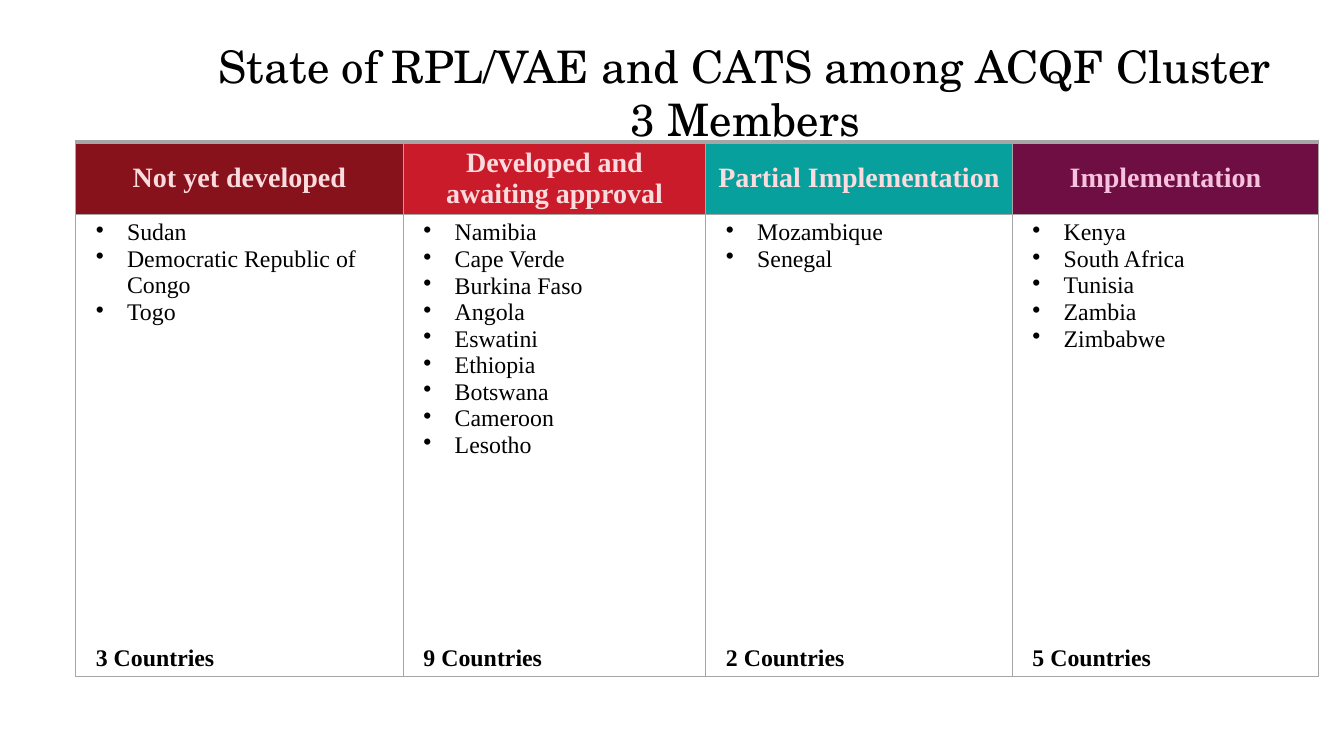
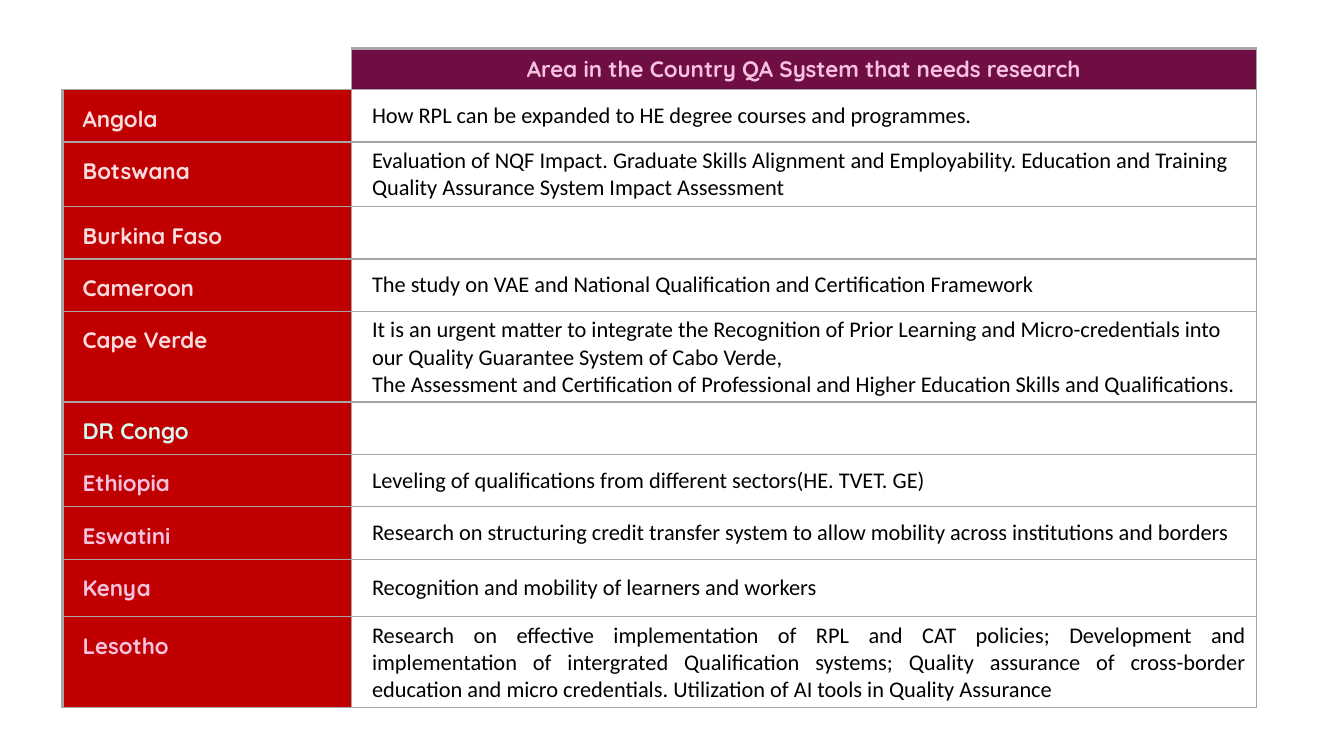
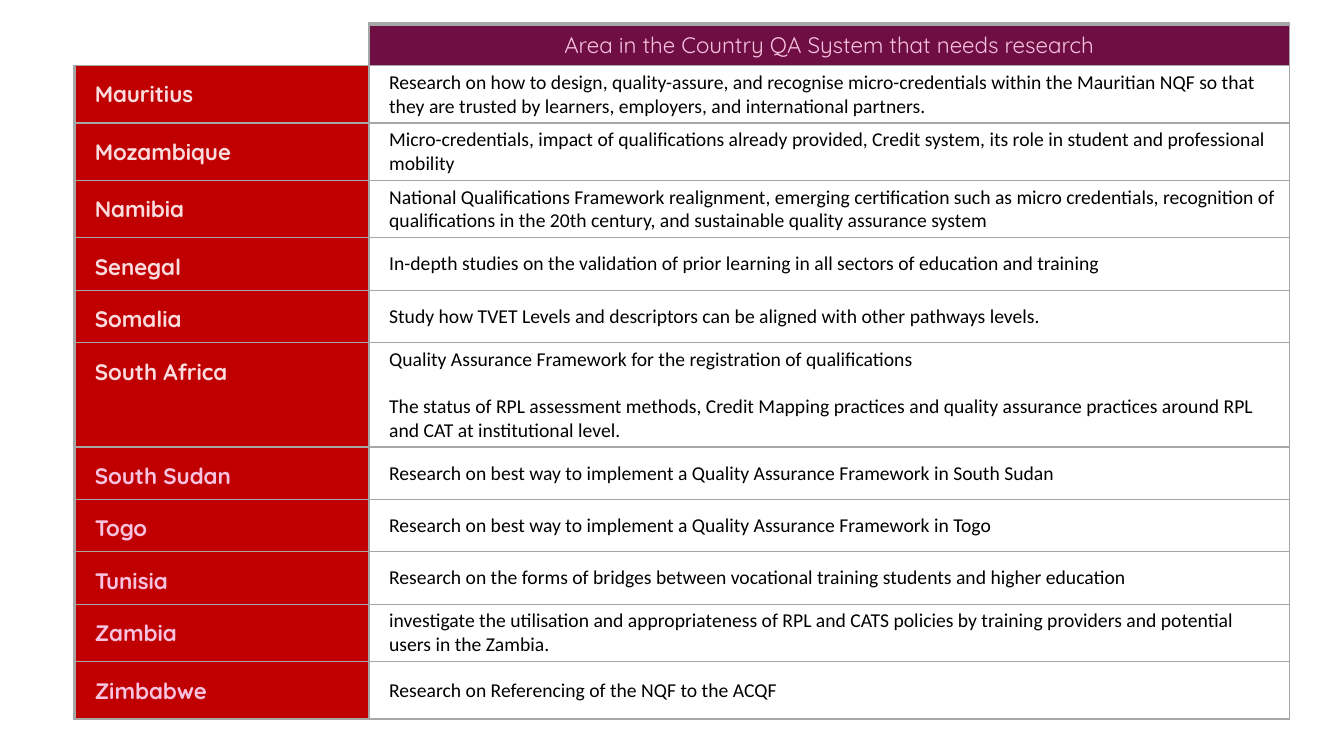
from lxml import etree
from pptx import Presentation
from pptx.dml.color import RGBColor
from pptx.enum.text import MSO_ANCHOR, PP_ALIGN
from pptx.oxml.ns import qn
from pptx.util import Inches, Pt

TOP, MIDDLE = MSO_ANCHOR.TOP, MSO_ANCHOR.MIDDLE
LEFT, CENTER, JUSTIFY = PP_ALIGN.LEFT, PP_ALIGN.CENTER, PP_ALIGN.JUSTIFY


class Theme:
    # Colours
    black, white, grey = "000000", "FFFFFF", "A6A6A6"
    red, maroon, crimson, teal, plum = "C00000", "87121C", "CA1B2B", "07A09C", "6F0E42"
    blush, pink, mint = "FADBDE", "F7C2DF", "D5FBF2"
    # Type: font name, size in points, bold
    title = dict(name="TeX Gyre Schola", size=Pt(32), bold=False)
    head = dict(name="Times New Roman", size=Pt(20), bold=True)
    item = dict(name="Times New Roman", size=Pt(17), bold=False)
    total = dict(item, bold=True)
    label = dict(name="Quicksand", size=Pt(16), bold=True)
    thin = dict(name="Quicksand", size=Pt(16), bold=False)
    text = dict(name="Calibri", size=Pt(16), bold=False)
    small = dict(text, size=Pt(14))
    # Line widths and line pitch, in points
    hair, thick, pitch = 1, 3, 19
    # Cell insets in inches: left, top, right, bottom
    plain = (0.1, 0.05, 0.1, 0.05)
    inset = (0.2, 0.05, 0.1, 0.05)
    low = (0.2, 0.15, 0.1, 0.05)


class Deck:
    def __init__(self):
        self.prs = Presentation()
        self.prs.slide_width, self.prs.slide_height = Inches(13.33), Inches(7.5)
        self.slide = None

    def new(self):
        self.slide = self.prs.slides.add_slide(self.prs.slide_layouts[6])

    def para(self, frame, words, style, ink, align=LEFT, gap=0, bullet=False):
        """Fill the first empty paragraph, or add one."""
        par = frame.paragraphs[0]
        if par.runs:
            par = frame.add_paragraph()
        if bullet:
            props = par._p.get_or_add_pPr()
            props.set("marL", str(Inches(0.31)))
            props.set("indent", str(-Inches(0.31)))
            etree.SubElement(props, qn("a:buChar"), char="•")
        par.alignment = align
        if gap:
            par.space_before = Pt(gap)
        run = par.add_run()
        run.text = words
        for key, value in style.items():
            setattr(run.font, key, value)
        run.font.color.rgb = RGBColor.from_string(ink)

    def title(self, words, left, top, width, height):
        box = self.slide.shapes.add_textbox(*map(Inches, (left, top, width, height)))
        box.text_frame.word_wrap = True
        self.para(box.text_frame, words, Theme.title, Theme.black, CENTER)

    def table(self, left, top, cols, rows):
        frame = self.slide.shapes.add_table(
            len(rows), len(cols), Inches(left), Inches(top),
            Inches(sum(cols)), Inches(sum(rows)))
        grid = frame.table
        grid.first_row = grid.horz_banding = False
        for col, width in zip(grid.columns, cols):
            col.width = Inches(width)
        for row, height in zip(grid.rows, rows):
            row.height = Inches(height)
        return grid

    def cell(self, cell, fill=None, inset=Theme.plain, anchor=MIDDLE, **edges):
        """Style a cell; edges maps L, R, T, B to a width, 0 for none."""
        props = cell._tc.get_or_add_tcPr()
        for side in "LRTB":
            width = edges.get(side, Theme.hair)
            line = etree.SubElement(props, qn("a:ln" + side), w=str(Pt(width)))
            if width:
                solid = etree.SubElement(line, qn("a:solidFill"))
                etree.SubElement(solid, qn("a:srgbClr"), val=Theme.grey)
            else:
                etree.SubElement(line, qn("a:noFill"))
        if fill:
            cell.fill.solid()
            cell.fill.fore_color.rgb = RGBColor.from_string(fill)
        else:
            cell.fill.background()
        sides = ("margin_left", "margin_top", "margin_right", "margin_bottom")
        for key, value in zip(sides, inset):
            setattr(cell, key, Inches(value))
        cell.vertical_anchor = anchor
        return cell.text_frame

    def states(self, groups):
        """Columns of countries, each with its total on the last line."""
        grid = self.table(0.75, 1.41, (3.25, 3, 3.04, 3.04), (0.71, 4.58))
        for col, (head, fill, ink, names, wraps) in enumerate(groups):
            frame = self.cell(grid.cell(0, col), fill, T=Theme.thick)
            self.para(frame, head, Theme.head, ink, CENTER)
            frame = self.cell(grid.cell(1, col), Theme.white, Theme.inset)
            for name in names:
                self.para(frame, name, Theme.item, Theme.black, bullet=True)
            free = 16 - len(names) - wraps
            self.para(frame, f"{len(names)} Countries", Theme.total, Theme.black,
                      gap=free * Theme.pitch)

    def needs(self, left, top, cols, head, body, rows, gap=0):
        """Research needs by country, under one heading."""
        grid = self.table(left, top, cols, [0.41] + [row[0] for row in rows])
        self.cell(grid.cell(0, 0), L=0, T=0)
        frame = self.cell(grid.cell(0, 1), Theme.plum, T=Theme.thick)
        self.para(frame, "Area in the Country QA System that needs research",
                  head, Theme.pink, CENTER)
        for num, (_, ink, name, *lines) in enumerate(rows, 1):
            frame = self.cell(grid.cell(num, 0), Theme.red, Theme.low, TOP,
                              L=Theme.thick)
            self.para(frame, name, Theme.label, ink)
            frame = self.cell(grid.cell(num, 1), Theme.white, Theme.inset)
            align = JUSTIFY if name == "Lesotho" else LEFT
            for pos, line in enumerate(lines):
                self.para(frame, line, body, Theme.black, align, gap if pos else 0)


# Columns: heading, fill, ink, countries, wrapped lines
STATES = [
    ("Not yet developed", Theme.maroon, Theme.blush,
     ["Sudan", "Democratic Republic of Congo", "Togo"], 1),
    ("Developed and awaiting approval", Theme.crimson, Theme.blush,
     ["Namibia", "Cape Verde", "Burkina Faso", "Angola", "Eswatini", "Ethiopia",
      "Botswana", "Cameroon", "Lesotho"], 0),
    ("Partial Implementation", Theme.teal, Theme.blush, ["Mozambique", "Senegal"], 0),
    ("Implementation", Theme.plum, Theme.pink,
     ["Kenya", "South Africa", "Tunisia", "Zambia", "Zimbabwe"], 0),
]

# Rows: height, ink, country, paragraphs
FIRST = [
    (0.52, Theme.blush, "Angola",
     "How RPL can be expanded to HE degree courses and programmes."),
    (0.64, Theme.blush, "Botswana",
     "Evaluation of NQF Impact. Graduate Skills Alignment and Employability. "
     "Education and Training Quality Assurance System Impact Assessment"),
    (0.52, Theme.blush, "Burkina Faso"),
    (0.52, Theme.blush, "Cameroon",
     "The study on VAE and National Qualification and Certification Framework"),
    (0.9, Theme.blush, "Cape Verde",
     "It is an urgent matter to integrate the Recognition of Prior Learning and "
     "Micro-credentials into our Quality Guarantee System of Cabo Verde,",
     "The Assessment and Certification of Professional and Higher Education Skills "
     "and Qualifications."),
    (0.52, Theme.mint, "DR Congo"),
    (0.52, Theme.pink, "Ethiopia",
     "Leveling of qualifications from different sectors(HE. TVET. GE)"),
    (0.52, Theme.pink, "Eswatini",
     "Research on structuring credit transfer system to allow mobility across "
     "institutions and borders"),
    (0.57, Theme.pink, "Kenya", "Recognition and mobility of learners and workers"),
    (0.9, Theme.pink, "Lesotho",
     "Research on effective implementation of RPL and CAT policies; Development and "
     "implementation of intergrated Qualification systems; Quality assurance of "
     "cross-border education and micro credentials. Utilization of AI tools in "
     "Quality Assurance"),
]

SECOND = [
    (0.57, Theme.blush, "Mauritius",
     "Research on how to design, quality-assure, and recognise micro-credentials "
     "within the Mauritian NQF so that they are trusted by learners, employers, and "
     "international partners."),
    (0.57, Theme.blush, "Mozambique",
     "Micro-credentials, impact of qualifications already provided, Credit system, "
     "its role in student and professional mobility"),
    (0.57, Theme.blush, "Namibia",
     "National Qualifications Framework realignment, emerging certification such as "
     "micro credentials, recognition of qualifications in the 20th century, and "
     "sustainable quality assurance system"),
    (0.52, Theme.blush, "Senegal",
     "In-depth studies on the validation of prior learning in all sectors of "
     "education and training"),
    (0.52, Theme.blush, "Somalia",
     "Study how TVET Levels and descriptors can be aligned with other pathways "
     "levels."),
    (1.03, Theme.blush, "South Africa",
     "Quality Assurance Framework for the registration of qualifications",
     "The status of RPL assessment methods, Credit Mapping practices and quality "
     "assurance practices around RPL and CAT at institutional level."),
    (0.52, Theme.pink, "South Sudan",
     "Research on best way to implement a Quality Assurance Framework in South Sudan"),
    (0.52, Theme.pink, "Togo",
     "Research on best way to implement a Quality Assurance Framework in Togo"),
    (0.52, Theme.pink, "Tunisia",
     "Research on the forms of bridges between vocational training students and "
     "higher education"),
    (0.57, Theme.pink, "Zambia",
     "investigate the utilisation and appropriateness of RPL and CATS policies by "
     "training providers and potential users in the Zambia."),
    (0.57, Theme.pink, "Zimbabwe", "Research on Referencing of the NQF to the ACQF"),
]


def main():
    deck = Deck()

    # State of implementation
    deck.new()
    deck.states(STATES)
    deck.title("State of RPL/VAE and CATS among ACQF Cluster 3 Members",
               2, 0.33, 10.78, 1.18)

    # Research needs, Angola to Lesotho
    deck.new()
    deck.needs(0.62, 0.48, (2.87, 8.97), Theme.label, Theme.text, FIRST)

    # Research needs, Mauritius to Zimbabwe
    deck.new()
    deck.needs(0.74, 0.24, (2.92, 9.13), Theme.thin, Theme.small, SECOND, gap=17)

    deck.prs.save("out.pptx")


if __name__ == "__main__":
    main()
